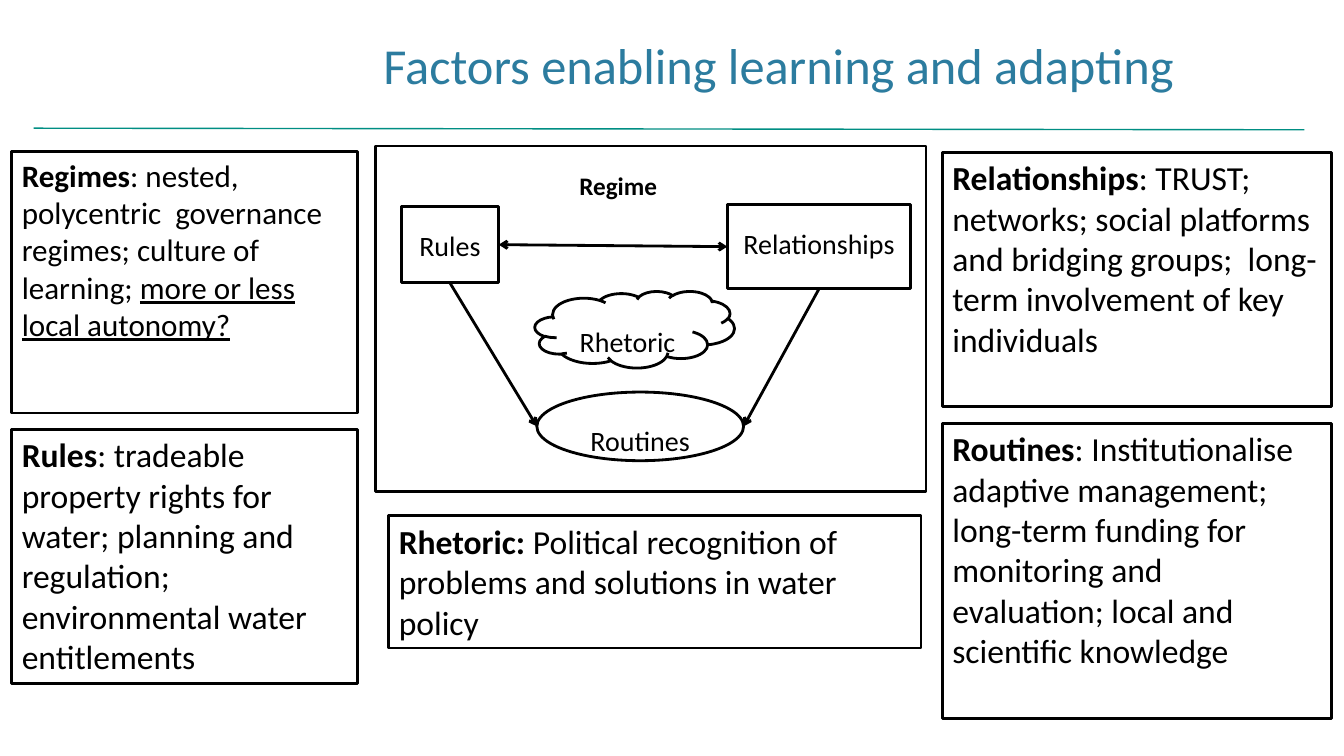
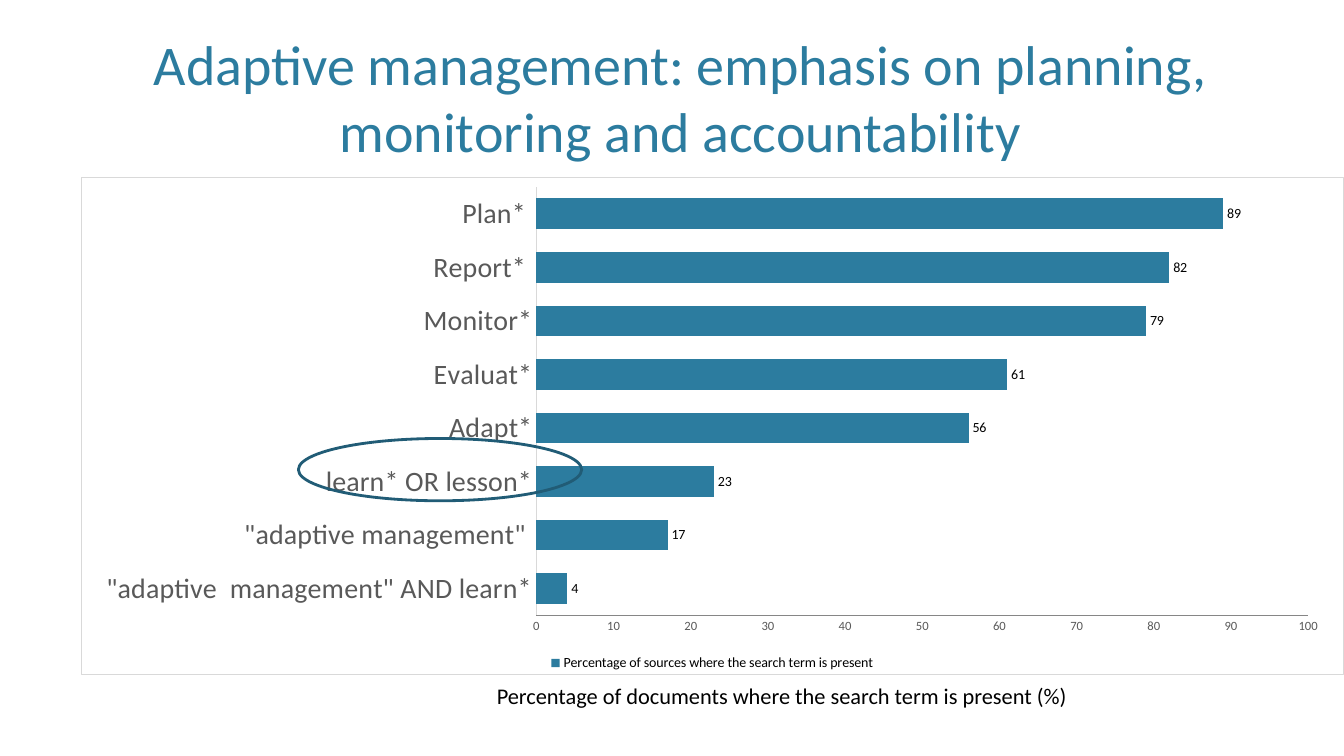
from lxml import etree
from pptx import Presentation
from pptx.chart.data import CategoryChartData
from pptx.dml.color import RGBColor
from pptx.enum.chart import XL_CHART_TYPE, XL_LABEL_POSITION, XL_LEGEND_POSITION, XL_TICK_MARK
from pptx.enum.shapes import MSO_CONNECTOR, MSO_SHAPE
from pptx.enum.text import MSO_ANCHOR, MSO_AUTO_SIZE, PP_ALIGN
from pptx.oxml import parse_xml
from pptx.oxml.ns import nsdecls, qn
from pptx.util import Cm, Pt

RECTANGLE, ELLIPSE, CLOUD = MSO_SHAPE.RECTANGLE, MSO_SHAPE.OVAL, MSO_SHAPE.CLOUD
STRAIGHT = MSO_CONNECTOR.STRAIGHT
TOP, MIDDLE, BOTTOM = MSO_ANCHOR.TOP, MSO_ANCHOR.MIDDLE, MSO_ANCHOR.BOTTOM
LEFT, CENTER = PP_ALIGN.LEFT, PP_ALIGN.CENTER
NO_AUTOFIT = MSO_AUTO_SIZE.NONE
BAR_CLUSTERED = XL_CHART_TYPE.BAR_CLUSTERED
NO_TICKS = XL_TICK_MARK.NONE
OUTSIDE_END = XL_LABEL_POSITION.OUTSIDE_END
LEGEND_BOTTOM = XL_LEGEND_POSITION.BOTTOM

FONT = "Calibri"
COLORS = {
    "title": "2C7C9F",
    "rule": "008E83",
    "ink": "000000",
    "paper": "FFFFFF",
    "highlight": "215C76",
    "axis_text": "595959",
    "axis_line": "868686",
    "border": "D9D9D9",
}


def color(name):
    return RGBColor.from_string(COLORS[name])


def format_font(font, size, color_name="ink", bold=False, underline=False):
    font.name, font.size = FONT, Pt(size)
    font.color.rgb = color(color_name)
    font.bold, font.underline = bold, underline


def write_text(shape, *runs, size=24, color_name="ink", align=LEFT, anchor=TOP, spacing=None):
    """Each run is a text or a pair of text and font options."""
    frame = shape.text_frame
    frame.word_wrap, frame.auto_size = True, NO_AUTOFIT
    frame.vertical_anchor = anchor
    paragraph = frame.paragraphs[0]
    paragraph.alignment, paragraph.line_spacing = align, spacing
    for item in runs:
        text, options = (item, {}) if isinstance(item, str) else item
        run = paragraph.add_run()
        run.text = text
        format_font(run.font, size, color_name, **options)


def add_outline(slide, kind, box, line="ink", fill=None):
    shape = slide.shapes.add_shape(kind, *(Cm(value) for value in box))
    shape.shadow.inherit = False
    shape.line.color.rgb, shape.line.width = color(line), Pt(2)
    if fill:
        shape.fill.solid()
        shape.fill.fore_color.rgb = color(fill)
    else:
        shape.fill.background()
    return shape


def add_line(slide, start, end, line="ink", width=2, arrows=()):
    connector = slide.shapes.add_connector(STRAIGHT, *start, *end)
    connector.line.color.rgb, connector.line.width = color(line), Pt(width)
    properties = connector.line._get_or_add_ln()
    for arrow in arrows:
        etree.SubElement(properties, qn(f"a:{arrow}"), type="arrow")
    etree.SubElement(properties.getparent(), qn("a:effectLst"))


def edge(shape, across, down):
    """Point at the given fractions of a shape's width and height."""
    return (shape.left + int(shape.width * across), shape.top + int(shape.height * down))


def add_titled_slide(presentation, title, box, size):
    slide = presentation.slides.add_slide(presentation.slide_layouts[5])
    shape = slide.shapes.title
    shape.left, shape.top, shape.width, shape.height = (Cm(value) for value in box)
    write_text(shape, title, size=size, color_name="title", align=CENTER, anchor=BOTTOM)
    return slide


def add_text_box(slide, box, *runs, **options):
    shape = slide.shapes.add_textbox(*(Cm(value) for value in box))
    write_text(shape, *runs, **options)


def add_factor(slide, box, name, *details, size=24):
    write_text(add_outline(slide, RECTANGLE, box), (name, {"bold": True}), *details, size=size)


def add_regime_diagram(slide, box):
    left, top = box[:2]
    add_outline(slide, RECTANGLE, box, fill="paper")
    add_text_box(slide, (left + 4.88, top + 0.48, 3.76, 1.02), ("Regime", {"bold": True}), size=18)

    # Nodes, placed relative to the frame
    nodes = {}
    for name, kind, across, down, width, height, anchor, spacing in (
        ("Rules", RECTANGLE, 0.64, 1.52, 2.46, 1.93, TOP, 1.5),
        ("Relationships", RECTANGLE, 8.86, 1.47, 4.62, 2.13, TOP, 1.5),
        ("Routines", ELLIPSE, 4.06, 6.2, 5.21, 1.73, MIDDLE, 1.8),
        ("Rhetoric", CLOUD, 4.01, 3.66, 5.03, 1.93, MIDDLE, 1.8),
    ):
        node = add_outline(slide, kind, (left + across, top + down, width, height), fill="paper")
        write_text(node, name, size=20, align=CENTER, anchor=anchor, spacing=spacing)
        nodes[name] = node

    # Arrows between the nodes
    rules, relationships, routines = nodes["Rules"], nodes["Relationships"], nodes["Routines"]
    add_line(slide, edge(rules, 1, 0.5), edge(relationships, 0, 0.5), arrows=("headEnd", "tailEnd"))
    add_line(slide, edge(rules, 0.5, 1), edge(routines, 0, 0.5), arrows=("tailEnd",))
    add_line(slide, edge(relationships, 0.5, 1), edge(routines, 1, 0.5), arrows=("tailEnd",))


def build_factors_slide(presentation):
    slide = add_titled_slide(
        presentation, "Factors enabling learning and adapting", (5.4, 0.23, 28.45, 2.29), 36)
    add_line(slide, (Cm(0.85), Cm(3.23)), (Cm(32.87), Cm(3.27)), line="rule", width=1)

    # Left column
    add_factor(slide, (0.3, 3.81, 8.72, 6.6), "Regimes",
               ": nested, polycentric  governance regimes; culture of learning; ",
               ("more or less local autonomy?", {"underline": True}), size=22.2)
    add_factor(slide, (0.3, 10.82, 8.72, 6.4), "Rules",
               ": tradeable property rights for water; planning and regulation; "
               "environmental water entitlements")

    # Middle column
    add_regime_diagram(slide, (9.47, 3.68, 13.87, 8.71))
    add_factor(slide, (9.8, 13, 13.41, 3.33), "Rhetoric: ",
               "Political recognition of problems and solutions in water policy")

    # Right column
    add_factor(slide, (23.75, 3.84, 9.8, 6.4), "Relationships",
               ": TRUST; networks; social platforms and bridging groups;  "
               "long-term involvement of key individuals")
    add_factor(slide, (23.75, 10.67, 9.8, 7.44), "Routines",
               ": Institutionalise adaptive management; long-term funding for monitoring "
               "and evaluation; local and scientific knowledge")


def add_search_term_chart(slide, box):
    shares = {
        '"adaptive  management" AND learn*': 4,
        '"adaptive management" ': 17,
        "learn* OR lesson*": 23,
        "Adapt*": 56,
        "Evaluat*": 61,
        "Monitor*": 79,
        "Report* ": 82,
        "Plan* ": 89,
    }
    data = CategoryChartData()
    data.categories = list(shares)
    data.add_series("Percentage of sources where the search term is present", list(shares.values()))
    chart = slide.shapes.add_chart(BAR_CLUSTERED, *(Cm(value) for value in box), data).chart
    chart.has_title = False
    format_font(chart.font, 10)

    # Bars and their values
    plot = chart.plots[0]
    plot.gap_width, plot.vary_by_categories = 75, False
    fill = plot.series[0].format.fill
    fill.solid()
    fill.fore_color.rgb = color("title")
    plot.has_data_labels = True
    labels = plot.data_labels
    labels.show_value, labels.position = True, OUTSIDE_END
    format_font(labels.font, 10)

    # Axes
    for axis, size, line in ((chart.category_axis, 20, "border"), (chart.value_axis, 9, "axis_line")):
        axis.major_tick_mark = axis.minor_tick_mark = NO_TICKS
        axis.has_major_gridlines = False
        format_font(axis.tick_labels.font, size, "axis_text")
        axis.format.line.color.rgb, axis.format.line.width = color(line), Pt(0.75)
    chart.value_axis.minimum_scale, chart.value_axis.maximum_scale = 0, 100
    chart.value_axis.major_unit = 10

    # Legend and border
    chart.has_legend = True
    chart.legend.position, chart.legend.include_in_layout = LEGEND_BOTTOM, False
    format_font(chart.legend.font, 10)
    border = parse_xml(
        f'<c:spPr {nsdecls("c", "a")}><a:noFill/><a:ln w="{Pt(0.75)}"><a:solidFill>'
        f'<a:srgbClr val="{COLORS["border"]}"/></a:solidFill></a:ln></c:spPr>')
    chart.element.find(qn("c:chart")).addnext(border)


def build_emphasis_slide(presentation):
    slide = add_titled_slide(
        presentation, "Adaptive management: emphasis on planning, monitoring and accountability",
        (0.81, 0.3, 32.66, 3.96), 40)
    add_search_term_chart(slide, (2.03, 4.45, 31.83, 12.57))
    add_outline(slide, ELLIPSE, (7.52, 11.05, 7.14, 1.57), line="highlight")
    add_text_box(slide, (12.27, 17.07, 18.82, 0.94),
                 "Percentage of documents where the search term is present (%)", size=16)


def main():
    presentation = Presentation()
    presentation.slide_width, presentation.slide_height = Cm(33.87), Cm(19.05)
    build_factors_slide(presentation)
    build_emphasis_slide(presentation)
    presentation.save("out.pptx")


if __name__ == "__main__":
    main()
